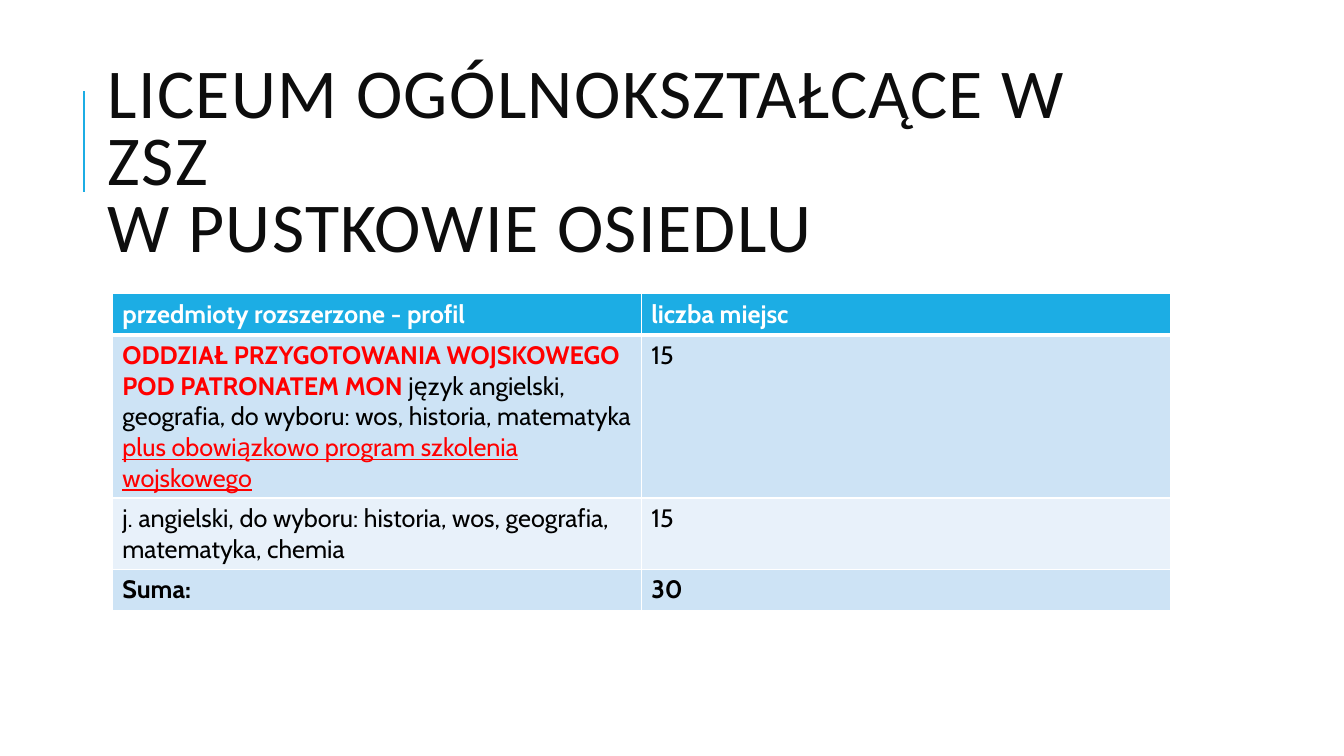
from dataclasses import dataclass

from lxml.etree import SubElement
from pptx import Presentation
from pptx.dml.color import RGBColor
from pptx.enum.shapes import MSO_CONNECTOR as Connector
from pptx.enum.text import MSO_ANCHOR as Anchor, PP_ALIGN as Align
from pptx.oxml.ns import qn
from pptx.util import Cm, Pt

BLUE = RGBColor(0x1C, 0xAD, 0xE4)
BAND_DARK = RGBColor(0xCD, 0xE3, 0xF5)
BAND_LIGHT = RGBColor(0xE8, 0xF1, 0xFA)
WHITE = RGBColor(0xFF, 0xFF, 0xFF)
BLACK = RGBColor(0, 0, 0)
INK = RGBColor(0x0D, 0x0D, 0x0D)
RED = RGBColor(0xFF, 0, 0)


@dataclass
class Span:
    text: str
    color: RGBColor = BLACK
    bold: bool = False
    underline: bool = False


@dataclass
class Row:
    height: float
    fill: RGBColor
    profile: list[Span]
    places: Span
    bottom_border: float = 1


TITLE_LINES = ["LICEUM OGÓLNOKSZTAŁCĄCE W ZSZ ", "W PUSTKOWIE OSIEDLU"]
COLUMN_WIDTH = 13.33
ROWS = [
    Row(1.04, BLUE, [Span("przedmioty rozszerzone - profil", WHITE, True)],
        Span("liczba miejsc", WHITE, True), bottom_border=3),
    Row(4.11, BAND_DARK,
        [Span("ODDZIAŁ PRZYGOTOWANIA WOJSKOWEGO POD PATRONATEM MON ", RED, True),
         Span("język angielski, geografia, do wyboru: wos, historia, matematyka "),
         Span("plus obowiązkowo program szkolenia wojskowego", RED, underline=True)],
        Span("15")),
    Row(1.8, BAND_LIGHT,
        [Span("j. angielski, do wyboru: historia, wos, geografia, matematyka, chemia")],
        Span("15")),
    Row(1.04, BAND_DARK, [Span("Suma:", bold=True)], Span("30", bold=True)),
]


def style_font(font, color: RGBColor, **values) -> None:
    for name, value in values.items():
        setattr(font, name, value)
    font.color.rgb = color


def add_accent_line(slide) -> None:
    accent = slide.shapes.add_connector(
        Connector.STRAIGHT, Cm(2.12), Cm(4.83), Cm(2.12), Cm(2.29))
    accent.line.color.rgb = BLUE
    accent.line.width = Pt(1.5)
    SubElement(accent.line._get_or_add_ln().getparent(), qn("a:effectLst"))


def add_title(slide) -> None:
    box = slide.shapes.add_textbox(Cm(2.46), Cm(1.63), Cm(27.38), Cm(5.08))
    frame = box.text_frame
    frame.word_wrap = True
    frame.vertical_anchor = Anchor.MIDDLE
    heading = frame.paragraphs[0]
    heading.alignment = Align.LEFT
    heading.line_spacing = 0.8
    for index, line in enumerate(TITLE_LINES):
        if index:
            heading.add_line_break()
        run = heading.add_run()
        run.text = line
        style_font(run.font, INK, name="Calibri", size=Pt(50))
        run.font._element.set("spc", "100")


def add_borders(cell, top: float, bottom: float) -> None:
    properties = cell._tc.get_or_add_tcPr()
    for side, points in {"L": 1, "R": 1, "T": top, "B": bottom}.items():
        border = SubElement(properties, qn(f"a:ln{side}"), w=str(Pt(points)))
        fill = SubElement(border, qn("a:solidFill"))
        SubElement(fill, qn("a:srgbClr"), val=str(WHITE))


def fill_cell(cell, spans: list[Span], row: Row, top: float) -> None:
    add_borders(cell, top, row.bottom_border)
    cell.fill.solid()
    cell.fill.fore_color.rgb = row.fill
    paragraph = cell.text_frame.paragraphs[0]
    for span in spans:
        run = paragraph.add_run()
        run.text = span.text
        style_font(run.font, span.color, name="Cabin", size=Pt(18),
                   bold=span.bold, underline=span.underline)


def add_places_table(slide) -> None:
    total_height = sum(row.height for row in ROWS)
    places = slide.shapes.add_table(
        len(ROWS), 2, Cm(2.83), Cm(7.4), Cm(2 * COLUMN_WIDTH), Cm(total_height)).table
    for column in places.columns:
        column.width = Cm(COLUMN_WIDTH)
    top = 1
    for index, row in enumerate(ROWS):
        places.rows[index].height = Cm(row.height)
        fill_cell(places.cell(index, 0), row.profile, row, top)
        fill_cell(places.cell(index, 1), [row.places], row, top)
        top = row.bottom_border


def main() -> None:
    deck = Presentation()
    deck.slide_width, deck.slide_height = Cm(33.87), Cm(19.05)
    slide = deck.slides.add_slide(deck.slide_layouts[6])
    # Heading with its accent line
    add_accent_line(slide)
    add_title(slide)
    # Places offered per profile
    add_places_table(slide)
    deck.save("out.pptx")


if __name__ == "__main__":
    main()
